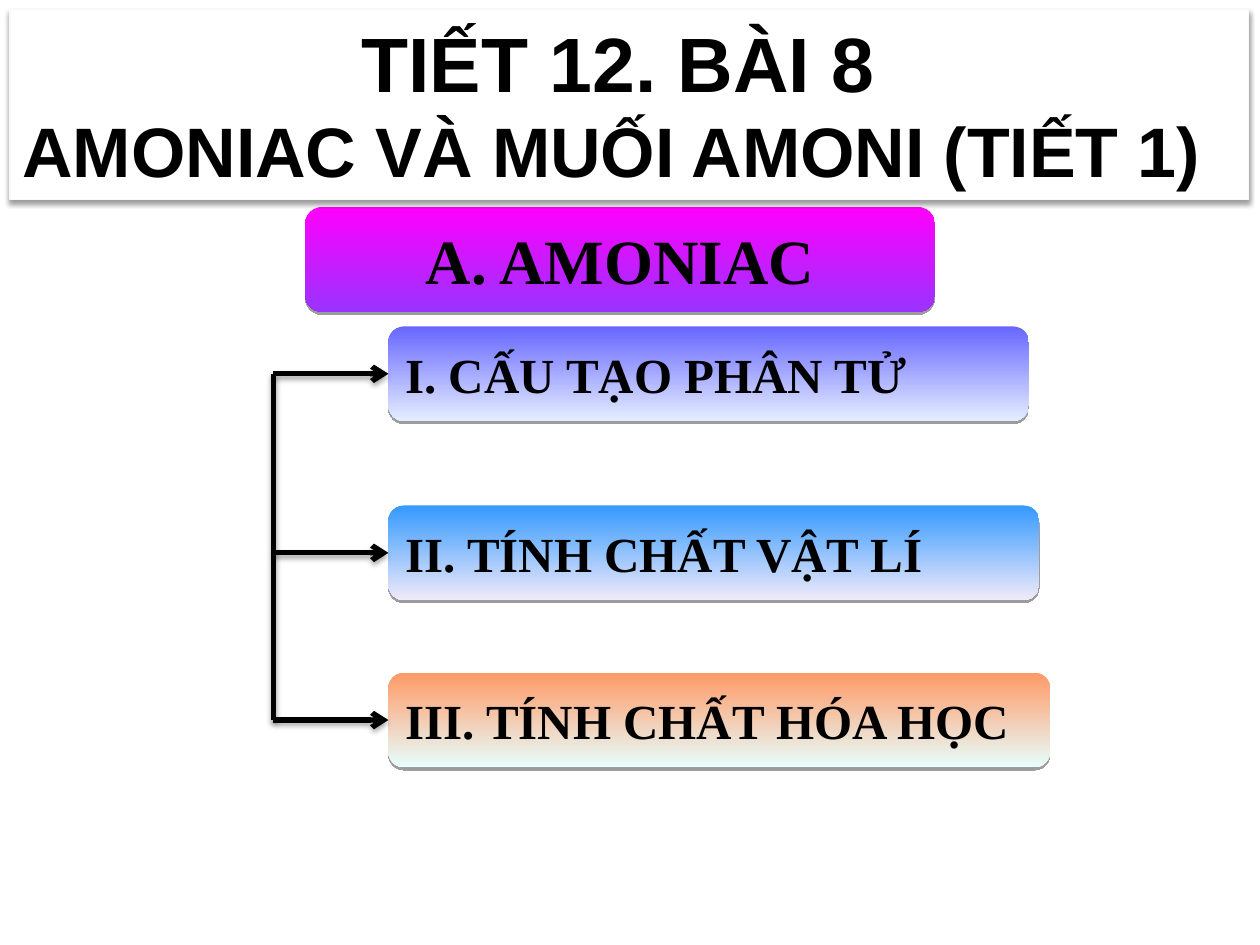
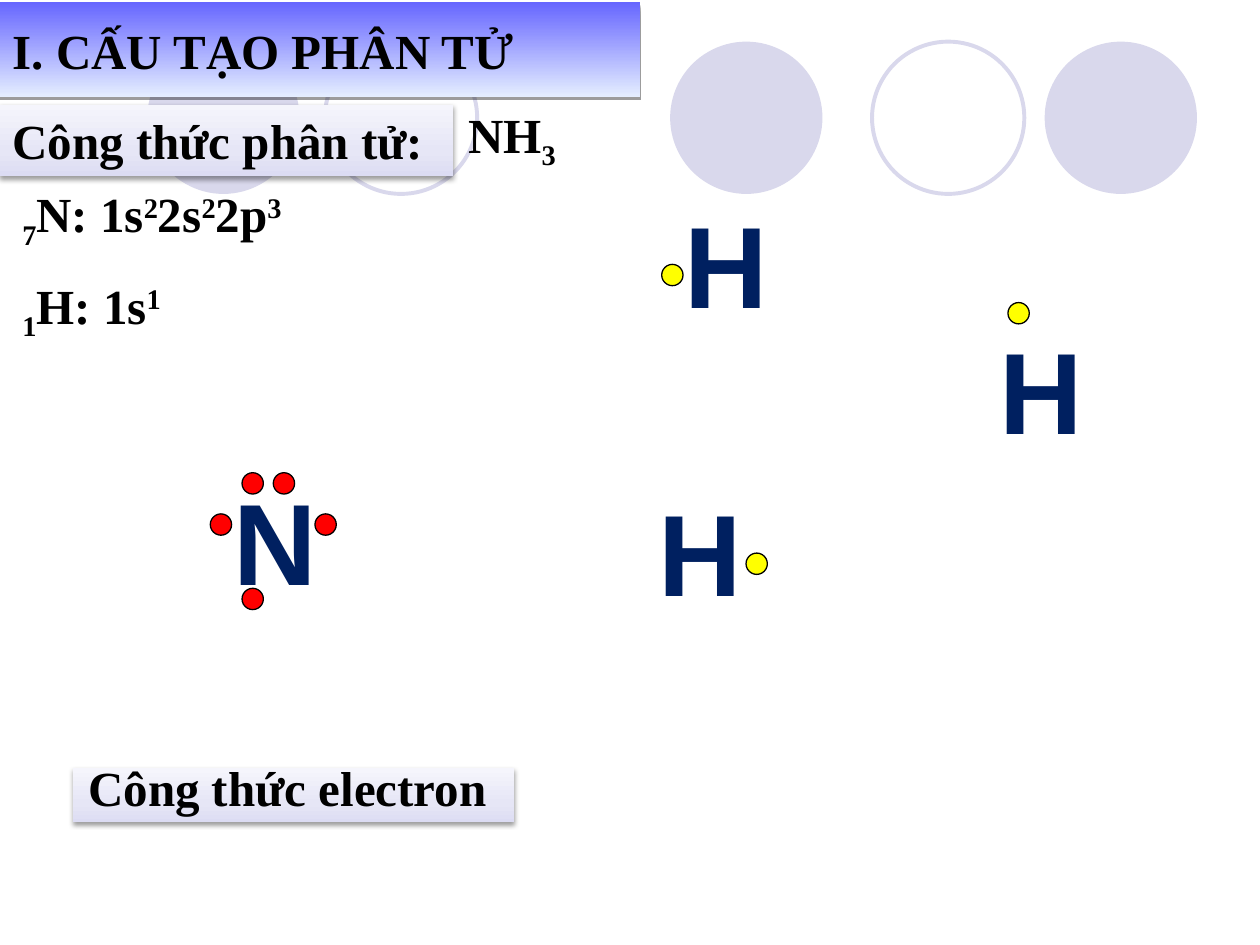
from dataclasses import dataclass

from lxml import etree
from pptx import Presentation
from pptx.dml.color import RGBColor
from pptx.enum.shapes import MSO_CONNECTOR, MSO_SHAPE
from pptx.enum.text import MSO_ANCHOR, MSO_AUTO_SIZE, PP_ALIGN
from pptx.oxml.ns import qn
from pptx.util import Cm, Pt

RECT, ROUND, OVAL = MSO_SHAPE.RECTANGLE, MSO_SHAPE.ROUNDED_RECTANGLE, MSO_SHAPE.OVAL
STRAIGHT = MSO_CONNECTOR.STRAIGHT
TOP, MIDDLE, BOTTOM = MSO_ANCHOR.TOP, MSO_ANCHOR.MIDDLE, MSO_ANCHOR.BOTTOM
LEFT, CENTER = PP_ALIGN.LEFT, PP_ALIGN.CENTER
LEFT_SIDE = 1
TITLE_ONLY = 5


@dataclass(frozen=True)
class Theme:
    sans: str = "Arial"
    serif: str = "Times New Roman"
    black: str = "000000"
    white: str = "FFFFFF"
    title_edge: str = "F9F9F9"
    circle: str = "D9D8EC"
    atom: str = "002060"
    nitrogen_dot: str = "FF0000"
    hydrogen_dot: str = "FFFF00"
    chapter: tuple = ((0, "FF00FF"), (100, "9933FF"))
    structure: tuple = ((0, "6767FF"), (100, "E5EEFF"))
    physical: tuple = ((0, "3399FF"), (100, "F0EAF9"))
    chemical: tuple = ((0, "FF9966"), (100, "E6FEFD"))
    label: tuple = ((0, "F5F5FC"), (65, "E6E6F6"), (100, "DCDCF3"))
    lesson_size: int = 44
    topic_size: int = 40
    chapter_size: int = 36
    body_size: int = 28
    atom_size: int = 66


THEME = Theme()

LESSON = "TIẾT 12. BÀI 8 "
TOPIC = "AMONIAC VÀ MUỐI AMONI (TIẾT 1)"
CHAPTER = "A. AMONIAC"
STRUCTURE = "I. CẤU TẠO PHÂN TỬ"
SECTIONS = [
    (STRUCTURE, 6.58, 12.91, THEME.structure),
    ("II. TÍNH CHẤT VẬT LÍ", 10.19, 13.12, THEME.physical),
    ("III. TÍNH CHẤT HÓA HỌC", 13.56, 13.34, THEME.chemical),
]
SECTION_LEFT, SECTION_HEIGHT, TRUNK_X = 7.83, 1.91, 5.51

FORMULA_LABEL = "Công thức phân tử:"
ELECTRON_LABEL = "Công thức electron "
SUB, SUP = -25, 30
FORMULA = [[("NH", 0), ("3", SUB)]]
CONFIGURATIONS = [
    [("7", SUB), ("N: 1s", 0), ("2", SUP), ("2s", 0), ("2", SUP), ("2p", 0), ("3", SUP)],
    [("1", SUB), ("H: 1s", 0), ("1", SUP)],
]
ATOMS = [
    ("N", (4.45, 9.35), THEME.nitrogen_dot,
     [(4.24, 10.36), (6.35, 10.36), (4.88, 9.53), (5.51, 9.53), (4.88, 11.86)]),
    ("H", (13.54, 3.76), THEME.hydrogen_dot, [(13.34, 5.33)]),
    ("H", (19.89, 6.3), THEME.hydrogen_dot, [(20.32, 6.1)]),
    ("H", (13.03, 9.58), THEME.hydrogen_dot, [(15.04, 11.15)]),
]
DOT_SIZE = 0.43
CIRCLE_LEFTS = [2.97, 6.55, 13.51, 17.58, 21.06]
CIRCLE_TOP, CIRCLE_SIZE = 0.84, 3.07


def rgb(color):
    return RGBColor.from_string(color)


def node(parent, tag, **attributes):
    return etree.SubElement(parent, qn(tag), {k: str(v) for k, v in attributes.items()})


def place(shape, box):
    shape.left, shape.top, shape.width, shape.height = map(Cm, box)


def paint_gradient(shape, stops):
    geometry = shape._element.spPr.find(qn("a:prstGeom"))
    gradient = etree.Element(qn("a:gradFill"), rotWithShape="1")
    stop_list = node(gradient, "a:gsLst")
    for position, color in stops:
        node(node(stop_list, "a:gs", pos=position * 1000), "a:srgbClr", val=color)
    node(gradient, "a:lin", ang=90 * 60000, scaled=0)
    geometry.addnext(gradient)


def cast_shadow(shape, blur=3.1, distance=1.6, opacity=38):
    properties = shape._element.spPr
    effects = properties.find(qn("a:effectLst"))
    if effects is None:
        effects = node(properties, "a:effectLst")
    outer = node(effects, "a:outerShdw", blurRad=Pt(blur), dist=Pt(distance),
                 dir=90 * 60000, rotWithShape=0)
    color = node(outer, "a:srgbClr", val=THEME.black)
    node(color, "a:alpha", val=opacity * 1000)


def write(paragraph, runs, size, font=THEME.serif, color=THEME.black, align=LEFT, spaced=True):
    paragraph.alignment = align
    if spaced:
        before = etree.Element(qn("a:spcBef"))
        node(before, "a:spcPct", val=50000)
        paragraph._p.get_or_add_pPr().insert(0, before)
    for text, baseline in runs:
        run = paragraph.add_run()
        run.text = text
        run.font.name, run.font.size, run.font.bold = font, Pt(size), True
        run.font.color.rgb = rgb(color)
        if baseline:
            run._r.get_or_add_rPr().set("baseline", str(baseline * 1000))


def open_frame(shape, anchor):
    frame = shape.text_frame
    frame.word_wrap = True
    frame.auto_size = MSO_AUTO_SIZE.NONE
    frame.vertical_anchor = anchor
    return frame


def add_plain(slide, kind, box, fill=None, line=None, weight=0.75):
    shape = slide.shapes.add_shape(kind, *map(Cm, box))
    shape.shadow.inherit = False
    if fill:
        shape.fill.solid()
        shape.fill.fore_color.rgb = rgb(fill)
    else:
        shape.fill.background()
    if line:
        shape.line.color.rgb = rgb(line)
        shape.line.width = Pt(weight)
    else:
        shape.line.fill.background()
    return shape


def add_panel(slide, kind, box, stops, text, size=THEME.body_size, align=LEFT, anchor=MIDDLE):
    panel = slide.shapes.add_shape(kind, *map(Cm, box))
    panel.shadow.inherit = False
    panel.line.fill.background()
    paint_gradient(panel, stops)
    cast_shadow(panel, blur=0 if kind == ROUND else 3.1)
    write(open_frame(panel, anchor).paragraphs[0], [(text, 0)], size, align=align)
    return panel


def add_text(slide, box, paragraphs, size=THEME.body_size, **style):
    frame = open_frame(slide.shapes.add_textbox(*map(Cm, box)), TOP)
    for index, runs in enumerate(paragraphs):
        paragraph = frame.add_paragraph() if index else frame.paragraphs[0]
        write(paragraph, runs, size, **style)


def shape_title(slide, box, geometry, anchor):
    title = slide.shapes.title
    place(title, box)
    outline = etree.Element(qn("a:prstGeom"), prst=geometry)
    node(outline, "a:avLst")
    title._element.spPr.find(qn("a:xfrm")).addnext(outline)
    slide.shapes._spTree.append(title._element)
    return title, open_frame(title, anchor)


def add_branch(slide, start, end, target=None):
    branch = slide.shapes.add_connector(STRAIGHT, *map(Cm, start + end))
    branch.line.color.rgb = rgb(THEME.black)
    branch.line.width = Pt(3)
    if target is not None:
        branch.end_connect(target, LEFT_SIDE)
        node(branch.line._get_or_add_ln(), "a:tailEnd", type="arrow")
    cast_shadow(branch, distance=1.8, opacity=35)


def build_outline(slide):
    add_panel(slide, ROUND, (6.15, 4.17, 12.7, 2.12), THEME.chapter, CHAPTER,
              THEME.chapter_size, CENTER)
    middles = [top + SECTION_HEIGHT / 2 for _, top, _, _ in SECTIONS]
    add_branch(slide, (TRUNK_X, middles[0]), (TRUNK_X, middles[-1]))
    for (text, top, width, stops), middle in zip(SECTIONS, middles):
        section = add_panel(slide, ROUND, (SECTION_LEFT, top, width, SECTION_HEIGHT), stops, text)
        add_branch(slide, (TRUNK_X, middle), (SECTION_LEFT, middle), section)

    title, frame = shape_title(slide, (0.2, 0.18, 24.97, 3.84), "rect", TOP)
    title.fill.solid()
    title.fill.fore_color.rgb = rgb(THEME.white)
    title.line.color.rgb = rgb(THEME.title_edge)
    title.line.width = Pt(0.75)
    cast_shadow(title)
    write(frame.paragraphs[0], [(LESSON, 0)], THEME.lesson_size, THEME.sans,
          align=CENTER, spaced=False)
    write(frame.add_paragraph(), [(TOPIC, 0)], THEME.topic_size, THEME.sans, spaced=False)


def build_structure(slide):
    for index, left in enumerate(CIRCLE_LEFTS):
        box = (left, CIRCLE_TOP, CIRCLE_SIZE, CIRCLE_SIZE)
        if index % 2:
            add_plain(slide, OVAL, box, line=THEME.circle, weight=2.25)
        else:
            add_plain(slide, OVAL, box, fill=THEME.circle)

    add_panel(slide, RECT, (1.47, 15.49, 8.89, 1.09), THEME.label, ELECTRON_LABEL,
              align=CENTER, anchor=BOTTOM)
    add_panel(slide, RECT, (0, 2.11, 9.14, 1.45), THEME.label, FORMULA_LABEL, anchor=TOP)
    add_text(slide, (9.19, 1.98, 2.34, 1.45), FORMULA)
    add_text(slide, (0.2, 3.58, 9.73, 3.23), CONFIGURATIONS)

    for symbol, (left, top), color, dots in ATOMS:
        for x, y in dots:
            add_plain(slide, OVAL, (x, y, DOT_SIZE, DOT_SIZE), color, THEME.black)
        add_text(slide, (left, top, 2.34, 3.05), [[(symbol, 0)]], THEME.atom_size,
                 font=THEME.sans, color=THEME.atom)

    title, frame = shape_title(slide, (0, 0.05, 12.91, SECTION_HEIGHT), "roundRect", MIDDLE)
    paint_gradient(title, THEME.structure)
    cast_shadow(title, blur=0)
    write(frame.paragraphs[0], [(STRUCTURE, 0)], THEME.body_size)


def main():
    deck = Presentation()
    deck.slide_width, deck.slide_height = Cm(25.4), Cm(19.05)
    for build in (build_outline, build_structure):
        build(deck.slides.add_slide(deck.slide_layouts[TITLE_ONLY]))
    deck.save("out.pptx")


if __name__ == "__main__":
    main()
